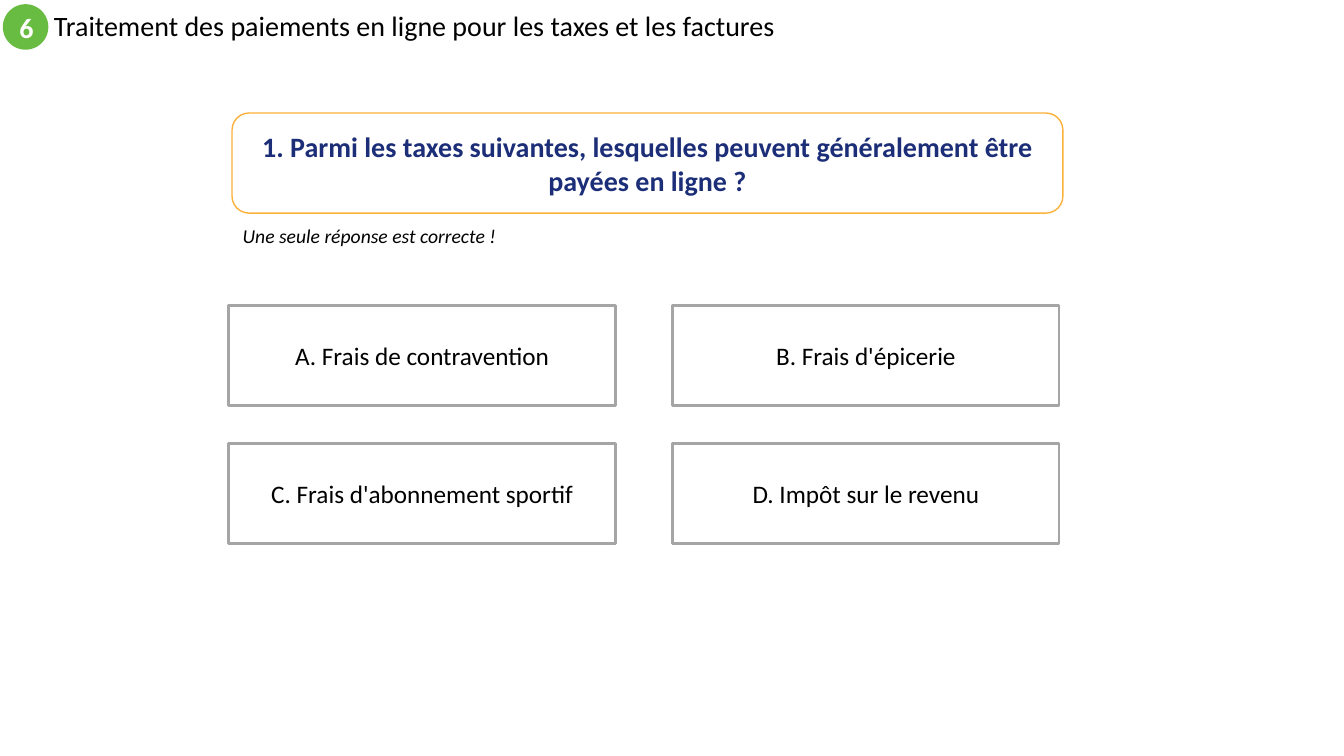
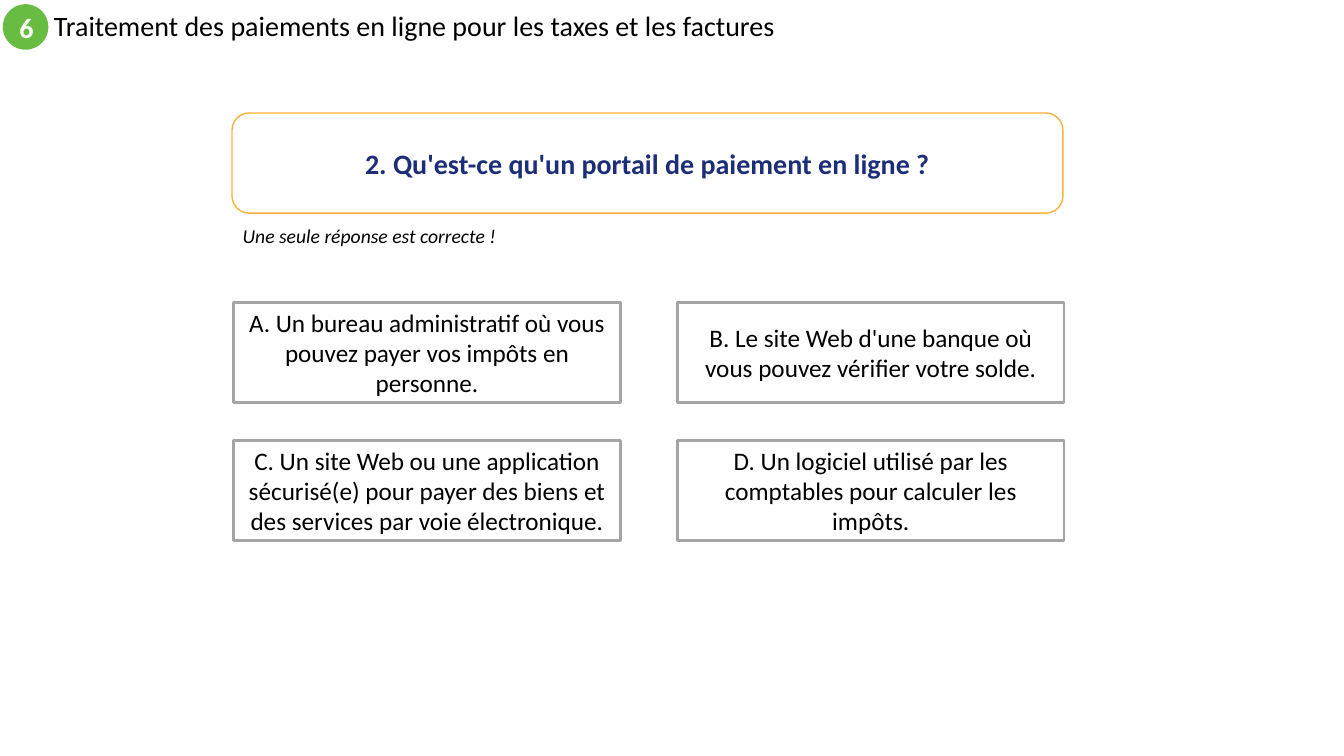
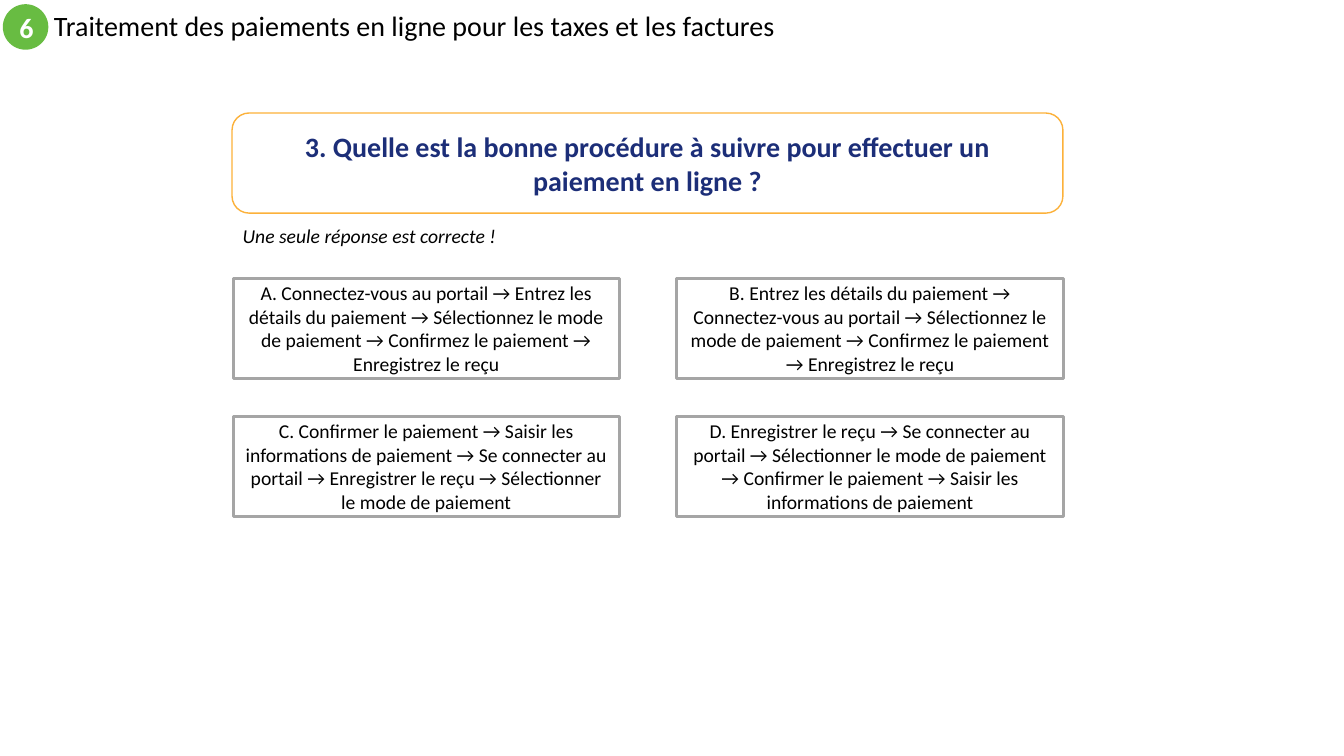
from pptx import Presentation
from pptx.dml.color import RGBColor
from pptx.enum.shapes import MSO_SHAPE as Preset
from pptx.enum.text import MSO_ANCHOR as Anchor, MSO_AUTO_SIZE as AutoSize, PP_ALIGN as Align
from pptx.util import Pt

# Colours and font
BLACK = RGBColor(0x00, 0x00, 0x00)
WHITE = RGBColor(0xFF, 0xFF, 0xFF)
GREEN = RGBColor(0x68, 0xBC, 0x42)
ORANGE = RGBColor(0xFC, 0xB1, 0x3A)
NAVY = RGBColor(0x1C, 0x2E, 0x78)
GREY = RGBColor(0xA5, 0xA5, 0xA5)
FONT = "Calibri"

# Shared wording
CHAPTER = "6"
TITLE = "Traitement des paiements en ligne pour les taxes et les factures"
HINT = "Une seule réponse est correcte !"

# Answer grid, in points
ANSWER_WIDTH, ANSWER_HEIGHT = 276, 71.5
COLUMN_STEP, ROW_STEP = 317, 98.6

# One entry per slide: question, answers in reading order, grid corner, text size
QUIZ = [
    {
        "question": "1. Parmi les taxes suivantes, lesquelles peuvent généralement être payées en ligne ?",
        "answers": [
            "A. Frais de contravention",
            "B. Frais d'épicerie",
            "C. Frais d'abonnement sportif",
            "D. Impôt sur le revenu",
        ],
        "left": 163.5, "top": 218, "size": 18,
    },
    {
        "question": "2. Qu'est-ce qu'un portail de paiement en ligne ?",
        "answers": [
            "A. Un bureau administratif où vous pouvez payer vos impôts en personne.",
            "B. Le site Web d'une banque où vous pouvez vérifier votre solde.",
            "C. Un site Web ou une application sécurisé(e) pour payer des biens et "
            "des services par voie électronique.",
            "D. Un logiciel utilisé par les comptables pour calculer les impôts.",
        ],
        "left": 167, "top": 216, "size": 18,
    },
    {
        "question": "3. Quelle est la bonne procédure à suivre pour effectuer un paiement en ligne ?",
        "answers": [
            "A. Connectez-vous au portail → Entrez les détails du paiement → "
            "Sélectionnez le mode de paiement → Confirmez le paiement → Enregistrez le reçu",
            "B. Entrez les détails du paiement → Connectez-vous au portail → "
            "Sélectionnez le mode de paiement → Confirmez le paiement → Enregistrez le reçu",
            "C. Confirmer le paiement → Saisir les informations de paiement → "
            "Se connecter au portail → Enregistrer le reçu → Sélectionner le mode de paiement",
            "D. Enregistrer le reçu → Se connecter au portail → Sélectionner le mode de paiement → "
            "Confirmer le paiement → Saisir les informations de paiement",
        ],
        "left": 166.5, "top": 198.7, "size": 14,
    },
]


def write_text(shape, text, *, size, color=BLACK, bold=False, italic=False,
               align=Align.CENTER, anchor=Anchor.MIDDLE, line_spacing=None):
    frame = shape.text_frame
    frame.word_wrap = True
    frame.vertical_anchor = anchor
    paragraph = frame.paragraphs[0]
    paragraph.alignment = align
    paragraph.line_spacing = line_spacing
    run = paragraph.add_run()
    run.text = text
    font = run.font
    font.name, font.size, font.bold, font.italic = FONT, Pt(size), bold, italic
    font.color.rgb = color


def add_panel(slide, preset, left, top, width, height, fill=WHITE, line=None, line_width=1):
    shape = slide.shapes.add_shape(preset, Pt(left), Pt(top), Pt(width), Pt(height))
    shape.shadow.inherit = False
    shape.fill.solid()
    shape.fill.fore_color.rgb = fill
    if line is None:
        shape.line.fill.background()
    else:
        shape.line.color.rgb = line
        shape.line.width = Pt(line_width)
    return shape


def add_label(slide, text, left, top, width, height, **text_format):
    box = slide.shapes.add_textbox(Pt(left), Pt(top), Pt(width), Pt(height))
    write_text(box, text, align=Align.LEFT, **text_format)
    return box


def add_header(slide):
    badge = add_panel(slide, Preset.OVAL, 2, 3, 32.5, 32.5, fill=GREEN)
    write_text(badge, CHAPTER, size=20, color=WHITE, bold=True)
    add_label(slide, TITLE, 31.5, 3, 576, 32.5, size=20, line_spacing=0.9)


def add_question(slide, question):
    panel = add_panel(slide, Preset.ROUNDED_RECTANGLE, 165.75, 80.75, 593.5, 71.5, line=ORANGE)
    panel.adjustments[0] = 0.17
    write_text(panel, question, size=20, color=NAVY, bold=True)
    hint = add_label(slide, HINT, 166.25, 156.25, 202, 24.25,
                     size=14, italic=True, anchor=Anchor.TOP)
    hint.text_frame.auto_size = AutoSize.SHAPE_TO_FIT_TEXT


def add_answers(slide, answers, left, top, size):
    for index, answer in enumerate(answers):
        row, column = divmod(index, 2)
        panel = add_panel(slide, Preset.RECTANGLE,
                          left + column * COLUMN_STEP, top + row * ROW_STEP,
                          ANSWER_WIDTH, ANSWER_HEIGHT, line=GREY, line_width=2)
        write_text(panel, answer, size=size)


def main():
    presentation = Presentation()
    presentation.slide_width, presentation.slide_height = Pt(960), Pt(540)
    blank = presentation.slide_layouts[6]
    for item in QUIZ:
        slide = presentation.slides.add_slide(blank)
        add_header(slide)
        add_question(slide, item["question"])
        add_answers(slide, item["answers"], item["left"], item["top"], item["size"])
    presentation.save("out.pptx")


if __name__ == "__main__":
    main()
